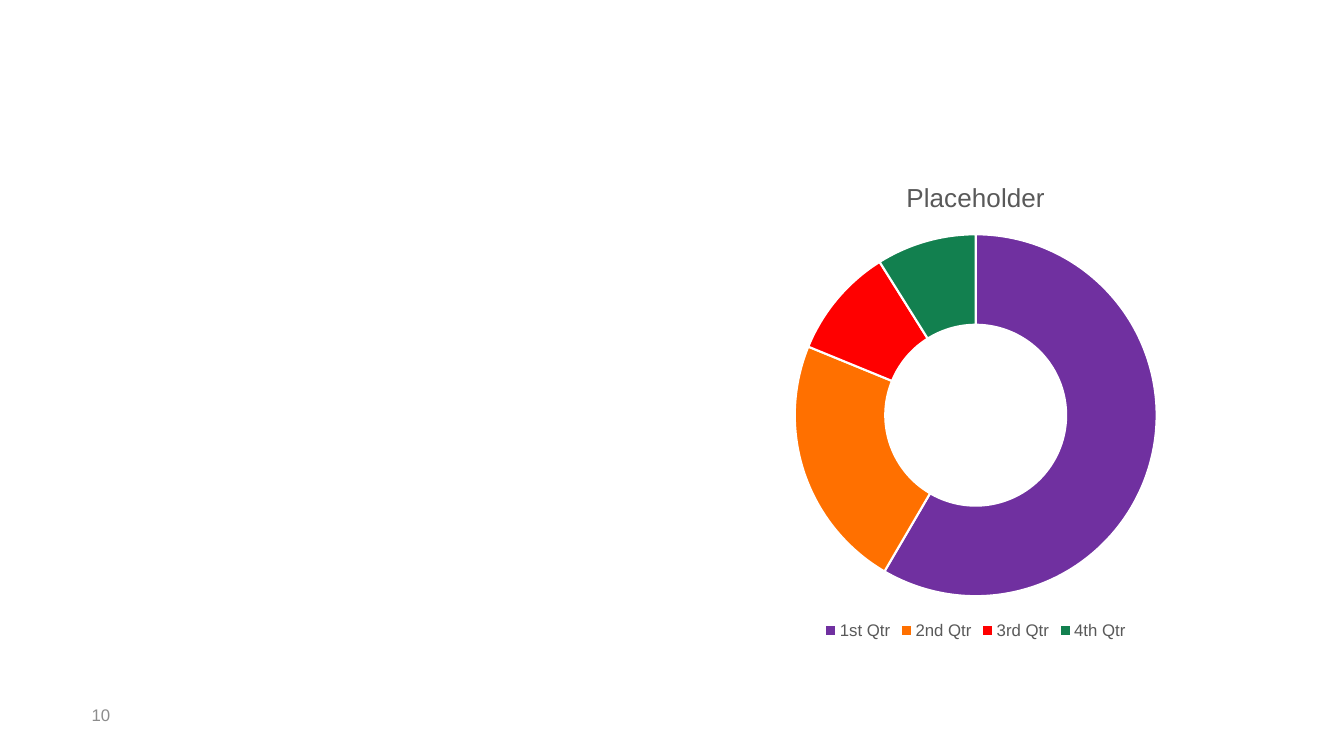
"""Build a slide with a quarterly doughnut chart and a page number."""
from dataclasses import dataclass

from pptx import Presentation
from pptx.chart.data import CategoryChartData
from pptx.dml.color import RGBColor
from pptx.enum.chart import XL_CHART_TYPE as ChartType, XL_LEGEND_POSITION as LegendPosition
from pptx.enum.text import MSO_ANCHOR as Anchor
from pptx.util import Cm, Pt


@dataclass(frozen=True)
class Theme:
    font: str = "Arial"
    title_size: float = 18.6
    label_size: float = 12
    line_width: float = 1.5
    text: str = "595959"
    number: str = "8C8C8C"
    border: str = "FFFFFF"


def style(font, size, color):
    font.name = theme.font
    font.size = Pt(size)
    font.bold = False
    font.color.rgb = RGBColor.from_string(color)


theme = Theme()
quarters = [
    ("1st Qtr", 59, "7030A0"),
    ("2nd Qtr", 23, "FF7000"),
    ("3rd Qtr", 10, "FF0000"),
    ("4th Qtr", 9, "12804F"),
]

deck = Presentation()
deck.slide_width, deck.slide_height = Cm(33.87), Cm(19.05)
page = deck.slides.add_slide(deck.slide_layouts[6])

data = CategoryChartData()
data.categories = [name for name, value, color in quarters]
data.add_series("Series 1", [value for name, value, color in quarters])
chart = page.shapes.add_chart(
    ChartType.DOUGHNUT, Cm(17.48), Cm(4.04), Cm(14.22), Cm(12.17), data
).chart
style(chart.font, theme.label_size, theme.text)

chart.has_title = True
heading = chart.chart_title.text_frame
heading.text = "Placeholder"
style(heading.paragraphs[0].runs[0].font, theme.title_size, theme.text)
chart.chart_title.include_in_layout = False

chart.has_legend = True
chart.legend.position = LegendPosition.BOTTOM
chart.legend.include_in_layout = False
style(chart.legend.font, theme.label_size, theme.text)

plot = chart.plots[0]
plot.vary_by_categories = True
plot.has_data_labels = False
for hole in chart.element.xpath(".//c:holeSize"):
    hole.set("val", "59")
for index, (name, value, color) in enumerate(quarters):
    slice_format = plot.series[0].points[index].format
    slice_format.fill.solid()
    slice_format.fill.fore_color.rgb = RGBColor.from_string(color)
    slice_format.line.color.rgb = RGBColor.from_string(theme.border)
    slice_format.line.width = Pt(theme.line_width)

number_box = page.shapes.add_textbox(Cm(2.06), Cm(17.5), Cm(6.78), Cm(1.02))
number_frame = number_box.text_frame
number_frame.word_wrap = True
number_frame.vertical_anchor = Anchor.MIDDLE
number_frame.text = "10"
style(number_frame.paragraphs[0].runs[0].font, theme.label_size, theme.number)

deck.save("out.pptx")
